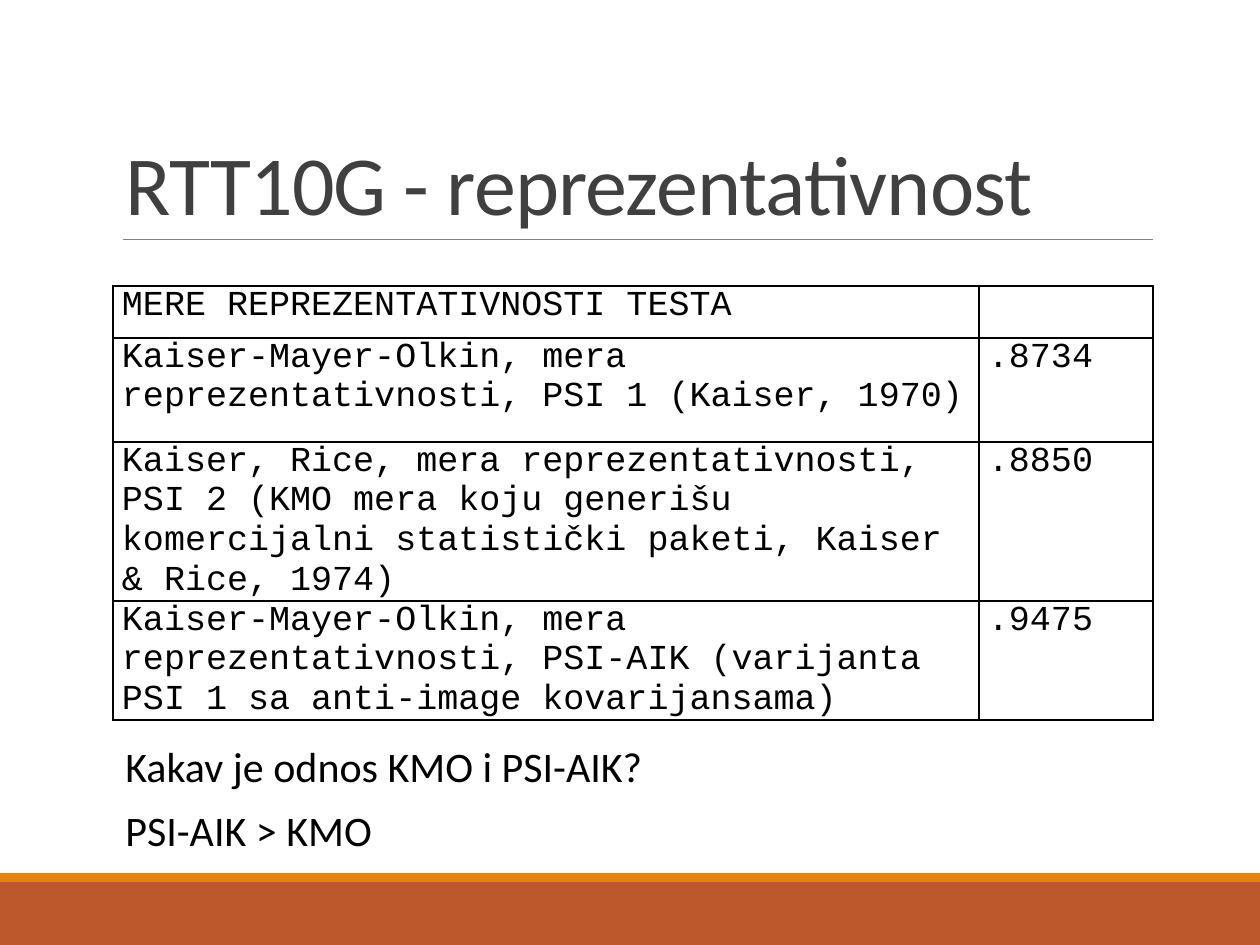
from dataclasses import dataclass

from lxml import etree
from pptx import Presentation
from pptx.dml.color import RGBColor
from pptx.enum.shapes import MSO_CONNECTOR, MSO_SHAPE
from pptx.enum.text import MSO_ANCHOR
from pptx.oxml.ns import qn
from pptx.util import Emu, Pt

RECT = MSO_SHAPE.RECTANGLE
STRAIGHT = MSO_CONNECTOR.STRAIGHT
TOP = MSO_ANCHOR.TOP
BOTTOM = MSO_ANCHOR.BOTTOM
PX_PER_INCH = 126


@dataclass(frozen=True)
class Theme:
    band: str = "BD582C"
    accent: str = "E48312"
    rule: str = "808080"
    heading: str = "404040"
    ink: str = "000000"
    font: str = "Calibri"
    mono: str = "Courier New"
    title_pt: int = 48
    note_pt: int = 24
    cell_pt: int = 20
    rule_pt: float = 0.5
    border_pt: int = 1


@dataclass(frozen=True)
class Box:
    x: int
    y: int
    w: int
    h: int


@dataclass(frozen=True)
class Bar:
    box: Box
    color: str


@dataclass(frozen=True)
class Label:
    box: Box
    text: str
    size: int
    color: str
    anchor: MSO_ANCHOR = TOP
    wrap: bool = False
    line_spacing: float = 1.0
    tracking: int = 0


@dataclass(frozen=True)
class Measure:
    name: str
    value: str
    height: int


THEME = Theme()
BARS = [
    Bar(Box(0, 882, 1260, 63), THEME.band),
    Bar(Box(0, 873, 1260, 9), THEME.accent),
]
LABELS = [
    Label(Box(113, 39, 1040, 200), "RTT10G - reprezentativnost", THEME.title_pt,
          THEME.heading, BOTTOM, True, 0.85, -50),
    Label(Box(113, 734, 547, 63), "Kakav je odnos KMO i PSI-AIK?", THEME.note_pt, THEME.ink),
    Label(Box(113, 798, 275, 63), "PSI-AIK > KMO", THEME.note_pt, THEME.ink),
]
MEASURES = [
    Measure("MERE REPREZENTATIVNOSTI TESTA", "", 52),
    Measure("Kaiser-Mayer-Olkin, mera reprezentativnosti, PSI 1 (Kaiser, 1970)", ".8734", 104),
    Measure("Kaiser, Rice, mera reprezentativnosti, PSI 2 (KMO mera koju generišu "
            "komercijalni statistički paketi, Kaiser & Rice, 1974)", ".8850", 159),
    Measure("Kaiser-Mayer-Olkin, mera reprezentativnosti, PSI-AIK (varijanta PSI 1 "
            "sa anti-image kovarijansama)", ".9475", 119),
]
COLUMNS = [866, 174]
CELL_INSET = 9


def px(n: int) -> Emu:
    return Emu(round(n * 914400 / PX_PER_INCH))


def place(box: Box) -> tuple[Emu, Emu, Emu, Emu]:
    return px(box.x), px(box.y), px(box.w), px(box.h)


def style_run(r, font: str, size: int, color: str) -> None:
    r.font.name = font
    r.font.size = Pt(size)
    r.font.color.rgb = RGBColor.from_string(color)


def draw_bar(s, bar: Bar) -> None:
    sp = s.shapes.add_shape(RECT, *place(bar.box))
    sp.shadow.inherit = False
    sp.fill.solid()
    sp.fill.fore_color.rgb = RGBColor.from_string(bar.color)
    sp.line.fill.background()


def draw_rule(s, x1: int, x2: int, y: int) -> None:
    line = s.shapes.add_connector(STRAIGHT, px(x1), px(y), px(x2), px(y))
    line.line.color.rgb = RGBColor.from_string(THEME.rule)
    line.line.width = Pt(THEME.rule_pt)
    etree.SubElement(line._element.spPr, qn("a:effectLst"))


def draw_label(s, label: Label) -> None:
    tf = s.shapes.add_textbox(*place(label.box)).text_frame
    tf.word_wrap = label.wrap
    tf.vertical_anchor = label.anchor
    tf.text = label.text
    p = tf.paragraphs[0]
    p.line_spacing = label.line_spacing
    for r in p.runs:
        style_run(r, THEME.font, label.size, label.color)
        if label.tracking:
            r._r.get_or_add_rPr().set("spc", str(label.tracking))


def add_borders(cell) -> None:
    tc_pr = cell._tc.get_or_add_tcPr()
    for i, side in enumerate(("a:lnL", "a:lnR", "a:lnT", "a:lnB")):
        ln = etree.Element(qn(side), w=str(Pt(THEME.border_pt)))
        fill = etree.SubElement(ln, qn("a:solidFill"))
        etree.SubElement(fill, qn("a:srgbClr"), val=THEME.ink)
        tc_pr.insert(i, ln)


def fill_cell(cell, text: str) -> None:
    cell.margin_left = cell.margin_right = px(CELL_INSET)
    cell.margin_top = cell.margin_bottom = 0
    cell.fill.background()
    cell.text = text
    for r in cell.text_frame.paragraphs[0].runs:
        style_run(r, THEME.mono, THEME.cell_pt, THEME.ink)
    add_borders(cell)


def draw_table(s, x: int, y: int, measures: list[Measure]) -> None:
    box = Box(x, y, sum(COLUMNS), sum(m.height for m in measures))
    table = s.shapes.add_table(len(measures), len(COLUMNS), *place(box)).table
    table.first_row = False
    table.horz_banding = False
    for column, width in zip(table.columns, COLUMNS):
        column.width = px(width)
    for row, measure in zip(table.rows, measures):
        row.height = px(measure.height)
        for cell, text in zip(row.cells, (measure.name, measure.value)):
            fill_cell(cell, text)


def main() -> None:
    prs = Presentation()
    prs.slide_width, prs.slide_height = px(1260), px(945)
    s = prs.slides.add_slide(prs.slide_layouts[6])
    for bar in BARS:
        draw_bar(s, bar)
    draw_rule(s, 123, 1153, 239)
    draw_table(s, 113, 286, MEASURES)
    for label in LABELS:
        draw_label(s, label)
    prs.save("out.pptx")


if __name__ == "__main__":
    main()
